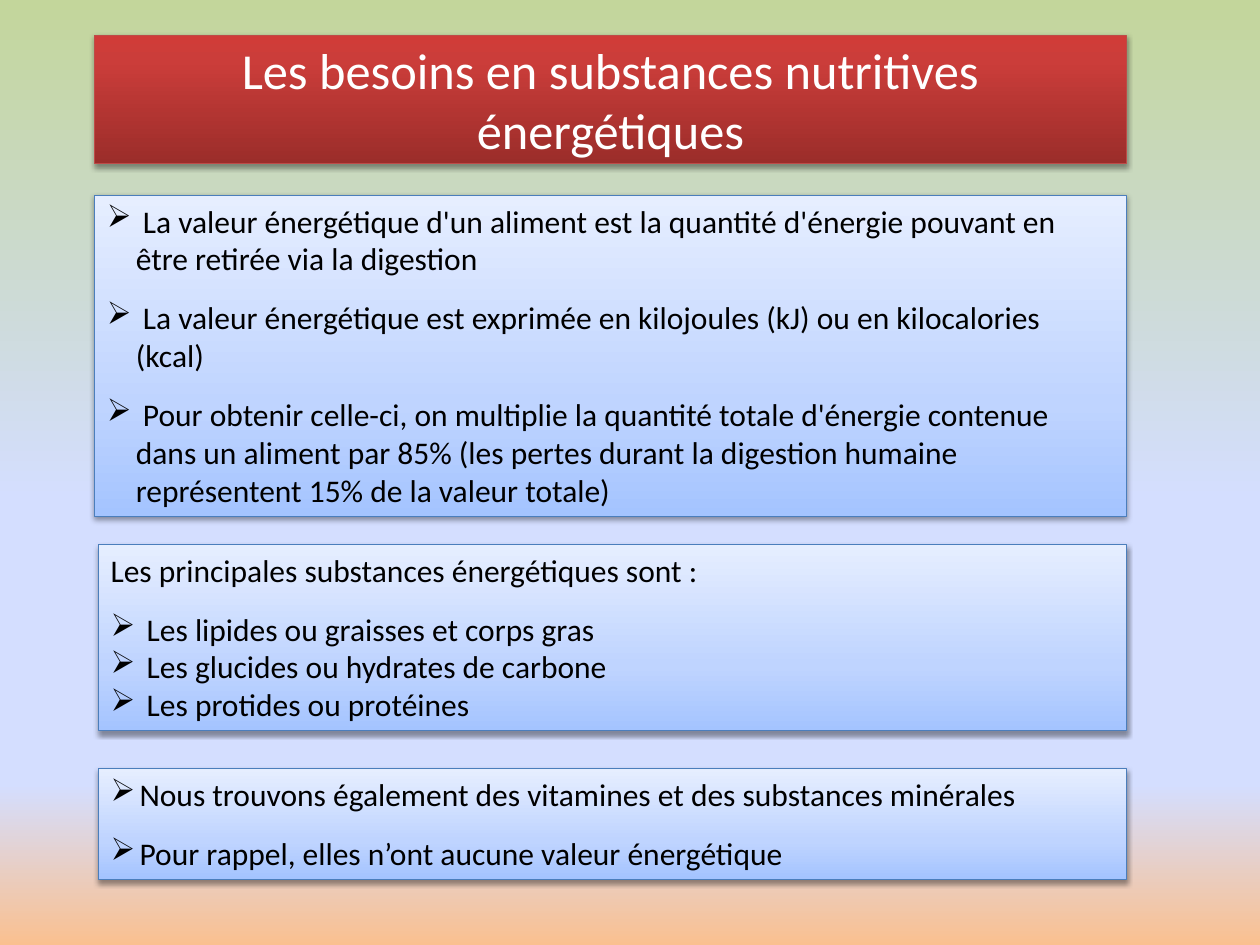
from pptx import Presentation
from pptx.dml.color import RGBColor as Color
from pptx.enum.shapes import MSO_SHAPE as Shape
from pptx.enum.text import MSO_ANCHOR as Anchor, MSO_AUTO_SIZE as AutoSize, PP_ALIGN as Align
from pptx.oxml import parse_xml
from pptx.oxml.ns import nsdecls
from pptx.util import Inches, Pt
from dataclasses import dataclass


@dataclass(frozen=True)
class Theme:
    font: str = "Calibri"
    title_size: float = 28.8
    body_size: float = 18
    title_text: str = "FFFFFF"
    body_text: str = "000000"
    title_line: str = "BE4B48"
    box_line: str = "4B7EBC"
    page_fill: tuple = ((0, "C3D69B"), (53, "D4DEFF"), (83, "D4DEFF"), (100, "FAC090"))
    title_fill: tuple = ((0, "D03C38"), (20, "CB3D3A"), (100, "9B2D2A"))
    box_fill: tuple = ((0, "E6EEFF"), (65, "BFD4FF"), (100, "A4C4FF"))
    bullet: str = "➢"
    bullet_indent: float = 0.23
    group_gap: float = 12.2


class SlideBuilder:
    """Draws styled elements on the current slide."""

    def __init__(self, deck, theme):
        self.theme = theme
        self.page = deck.slides.add_slide(deck.slide_layouts[6])

    def gradient(self, owner, fill, stops):
        fill.gradient()
        fill.gradient_angle = 270
        stop_list = owner.element.xpath(".//a:gsLst")[0]
        for stop in list(stop_list):
            stop_list.remove(stop)
        for position, color in stops:
            stop_list.append(parse_xml(
                f'<a:gs {nsdecls("a")} pos="{position * 1000}"><a:srgbClr val="{color}"/></a:gs>'))

    def background(self):
        self.gradient(self.page, self.page.background.fill, self.theme.page_fill)

    def panel(self, bounds, stops, line_color, frame_format):
        box = self.page.shapes.add_shape(Shape.RECTANGLE, *map(Inches, bounds))
        self.gradient(box, box.fill, stops)
        box.line.color.rgb = Color.from_string(line_color)
        box.line.width = Pt(0.75)
        box.shadow.inherit = False
        box.element.xpath(".//a:effectLst")[0].append(parse_xml(
            f'<a:outerShdw {nsdecls("a")} blurRad="{Pt(3.1)}" dist="{Pt(1.6)}" dir="5400000" '
            'rotWithShape="0"><a:srgbClr val="000000"><a:alpha val="38000"/></a:srgbClr></a:outerShdw>'))
        for name, value in frame_format.items():
            setattr(box.text_frame, name, value)
        return box.text_frame

    def fill_paragraph(self, para, text, size, color, align):
        para.text = text
        para.alignment = align
        font_format = {"name": self.theme.font, "size": Pt(size)}
        for span in para.runs:
            for name, value in font_format.items():
                setattr(span.font, name, value)
            span.font.color.rgb = Color.from_string(color)

    def title(self, bounds, text):
        theme = self.theme
        frame = self.panel(bounds, theme.title_fill, theme.title_line,
                           {"word_wrap": True, "vertical_anchor": Anchor.MIDDLE})
        self.fill_paragraph(frame.paragraphs[0], text, theme.title_size, theme.title_text,
                            Align.CENTER)

    def bullet(self, para):
        indent = Inches(self.theme.bullet_indent)
        properties = para._p.get_or_add_pPr()
        properties.set("marL", str(indent))
        properties.set("indent", str(-indent))
        properties.append(parse_xml(f'<a:buChar {nsdecls("a")} char="{self.theme.bullet}"/>'))

    def text_box(self, bounds, groups, heading=None):
        theme = self.theme
        frame = self.panel(bounds, theme.box_fill, theme.box_line,
                           {"word_wrap": True, "vertical_anchor": Anchor.TOP,
                            "auto_size": AutoSize.SHAPE_TO_FIT_TEXT})
        all_groups = [[heading], *groups] if heading else groups
        for group_index, group in enumerate(all_groups):
            for index, text in enumerate(group):
                first = group_index == index == 0
                para = frame.paragraphs[0] if first else frame.add_paragraph()
                self.fill_paragraph(para, text, theme.body_size, theme.body_text, Align.LEFT)
                if group_index and index == 0:
                    para.space_before = Pt(theme.group_gap)
                if text != heading:
                    self.bullet(para)


def main():
    deck = Presentation()
    deck.slide_width, deck.slide_height = Inches(10), Inches(7.5)
    builder = SlideBuilder(deck, Theme())
    builder.background()
    builder.title((0.75, 0.28, 8.19, 1.02), "Les besoins en substances nutritives\vénergétiques")
    builder.text_box((0.75, 1.55, 8.19, 2.55), [
        [" La valeur énergétique d'un aliment est la quantité d'énergie pouvant en être retirée "
         "via la digestion"],
        [" La valeur énergétique est exprimée en kilojoules (kJ) ou en kilocalories (kcal)"],
        [" Pour obtenir celle-ci, on multiplie la quantité totale d'énergie contenue dans un aliment "
         "par 85% (les pertes durant la digestion humaine représentent 15% de la valeur totale)"],
    ])
    builder.text_box((0.78, 6.1, 8.16, 0.88), [
        ["Nous trouvons également des vitamines et des substances minérales"],
        ["Pour rappel, elles n’ont aucune valeur énergétique"],
    ])
    builder.text_box((0.78, 4.32, 8.16, 1.48), [
        [" Les lipides ou graisses et corps gras",
         " Les glucides ou hydrates de carbone",
         " Les protides ou protéines"],
    ], heading="Les principales substances énergétiques sont :")
    deck.save("out.pptx")


if __name__ == "__main__":
    main()
